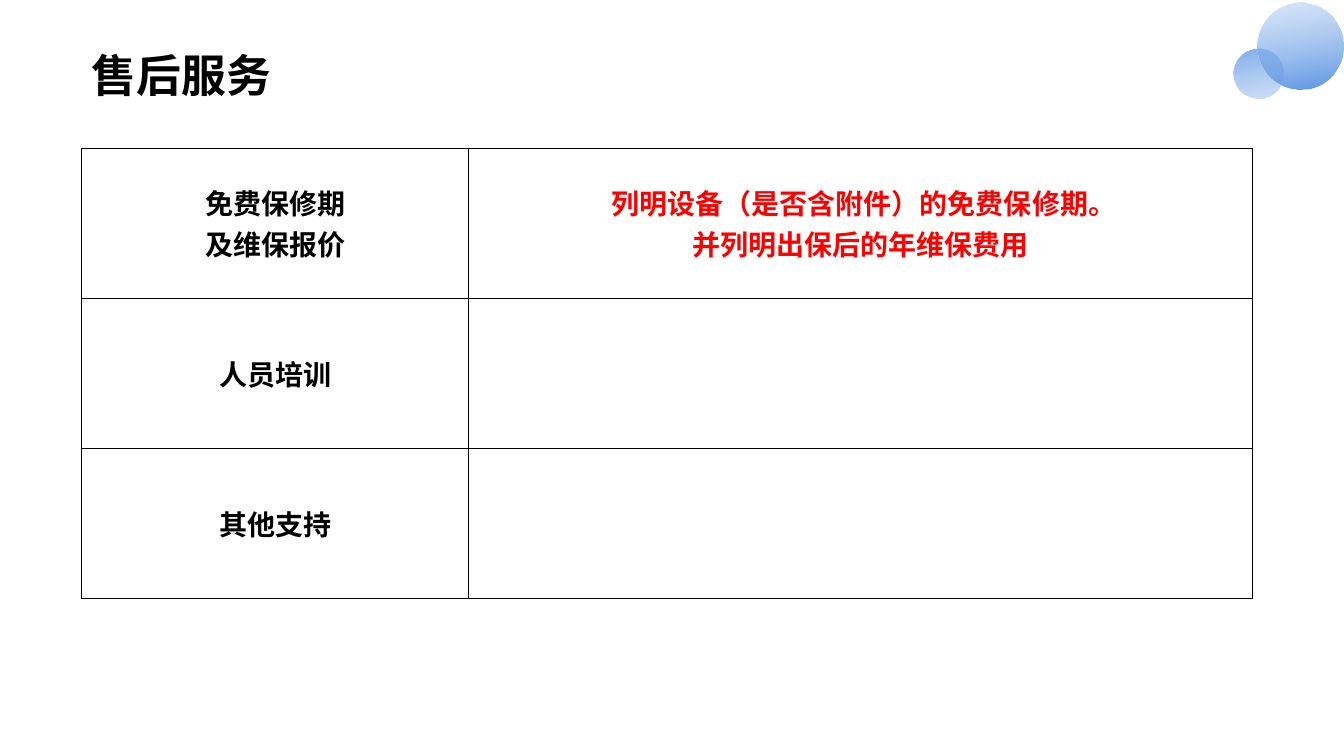
from lxml.etree import SubElement
from pptx import Presentation
from pptx.dml.color import RGBColor
from pptx.enum.shapes import MSO_SHAPE
from pptx.enum.text import MSO_ANCHOR, PP_ALIGN
from pptx.oxml.ns import qn
from pptx.util import Cm, Pt

FONT = "Noto Sans CJK SC"
COLORS = {
    "text": "000000",
    "notice": "FF0000",
    "border": "000000",
    "pale": "ADCAF1",
    "sky": "77A7E8",
    "blue": "4D8CE1",
}


def style_run(run, size, color):
    run.font.size = Pt(size)
    run.font.bold = True
    run.font.name = FONT
    run.font.color.rgb = RGBColor.from_string(COLORS[color])
    SubElement(run.font._element, qn("a:ea"), typeface=FONT)


def add_borders(cell):
    properties = cell._tc.get_or_add_tcPr()
    for side in ("lnL", "lnR", "lnT", "lnB"):
        line = SubElement(properties, qn(f"a:{side}"), w=str(Pt(0.5)))
        fill = SubElement(line, qn("a:solidFill"))
        SubElement(fill, qn("a:srgbClr"), val=COLORS["border"])


prs = Presentation()
prs.slide_width, prs.slide_height = Cm(33.87), Cm(19.05)
slide = prs.slides.add_slide(prs.slide_layouts[6])

# Corner bubbles: left, top, diameter, rotation, end colour, start opacity in percent
bubbles = [
    (31.09, 1.22, 1.25, 215, "sky", 55),
    (31.68, 0.06, 2.19, 35, "blue", 39),
]
for left, top, diameter, rotation, end_color, opacity in bubbles:
    bubble = slide.shapes.add_shape(
        MSO_SHAPE.OVAL, Cm(left), Cm(top), Cm(diameter), Cm(diameter))
    bubble.rotation = rotation
    bubble.shadow.inherit = False
    bubble.line.fill.background()
    bubble.fill.gradient()
    bubble.fill.gradient_angle = 315
    for stop, color in zip(bubble.fill.gradient_stops, ("pale", end_color)):
        stop.color.rgb = RGBColor.from_string(COLORS[color])
    start = bubble._element.spPr.find(".//" + qn("a:srgbClr"))
    SubElement(start, qn("a:alpha"), val=str(opacity * 1000))

# Title
title = slide.shapes.add_textbox(Cm(2.06), Cm(1.09), Cm(11), Cm(1.63))
title.text_frame.word_wrap = True
title.text_frame.text = "售后服务"
style_run(title.text_frame.paragraphs[0].runs[0], 32, "text")

# Service table
services = [
    ("免费保修期\n及维保报价", " 列明设备（是否含附件）的免费保修期。\n并列明出保后的年维保费用"),
    ("人员培训", ""),
    ("其他支持", ""),
]
column_widths = (9.75, 19.76)
row_height = 3.78
service_table = slide.shapes.add_table(
    len(services), 2, Cm(2.06), Cm(3.73),
    Cm(sum(column_widths)), Cm(row_height * len(services))).table
service_table.first_row = False
service_table.horz_banding = False
for column, width in zip(service_table.columns, column_widths):
    column.width = Cm(width)

for row, texts in zip(service_table.rows, services):
    row.height = Cm(row_height)
    for cell, text, color in zip(row.cells, texts, ("text", "notice")):
        add_borders(cell)
        cell.fill.background()
        cell.margin_left = cell.margin_right = 0
        cell.margin_top = cell.margin_bottom = 0
        cell.vertical_anchor = MSO_ANCHOR.MIDDLE
        cell.text_frame.text = text
        for paragraph in cell.text_frame.paragraphs:
            paragraph.alignment = PP_ALIGN.CENTER
            for run in paragraph.runs:
                style_run(run, 20, color)

prs.save("out.pptx")
